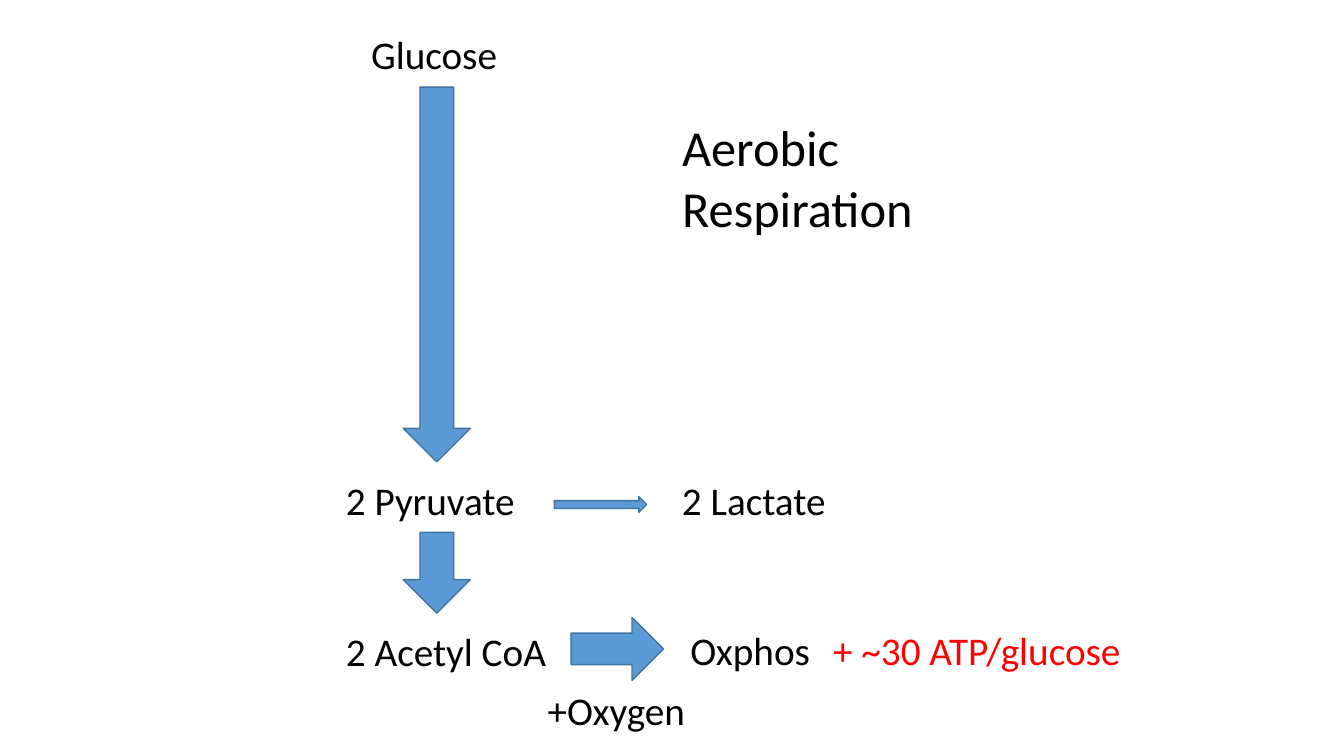
from pptx import Presentation
from pptx.dml.color import RGBColor
from pptx.enum.shapes import MSO_SHAPE
from pptx.enum.text import MSO_ANCHOR, MSO_AUTO_SIZE, PP_ALIGN
from pptx.util import Pt

DOWN, RIGHT = MSO_SHAPE.DOWN_ARROW, MSO_SHAPE.RIGHT_ARROW
TOP, LEFT = MSO_ANCHOR.TOP, PP_ALIGN.LEFT
FIT_SHAPE, FIT_NONE = MSO_AUTO_SIZE.SHAPE_TO_FIT_TEXT, MSO_AUTO_SIZE.NONE

BLACK = RGBColor(0x00, 0x00, 0x00)
RED = RGBColor(0xFF, 0x00, 0x00)
BLUE = RGBColor(0x5B, 0x9B, 0xD5)
DARK_BLUE = RGBColor(0x43, 0x73, 0x9E)

PX = 9525  # EMU per px, 96 px to the inch
PAGE_SIZE = (1280, 720)
LABEL_WIDTH, LABEL_HEIGHT = 264, 55

# Content: lengths in px
TITLE = ["Aerobic", "Respiration"]
TITLE_BOX = (640, 106, 360, 126)

LABELS = [  # text, left, top, width, colour
    ("Glucose", 344, 24, LABEL_WIDTH, BLACK),
    ("2 Pyruvate", 320, 449, LABEL_WIDTH, BLACK),
    ("2 Lactate", 640, 449, LABEL_WIDTH, BLACK),
    ("2 Acetyl CoA", 320, 593, LABEL_WIDTH, BLACK),
    ("Oxphos", 648, 592, LABEL_WIDTH, BLACK),
    ("+Oxygen", 512, 649, LABEL_WIDTH, BLACK),
    ("+ ~30 ATP/glucose", 784, 592, 356, RED),
]

ARROWS = [  # preset, left, top, width, height
    (DOWN, 384, 83, 64, 357),
    (RIGHT, 528, 473, 88, 15),
    (DOWN, 384, 507, 64, 77),
    (RIGHT, 544, 588, 88, 60),
]


def scaled(*lengths):
    return [length * PX for length in lengths]


def write_text(box, lines, size=28, color=BLACK, fit=FIT_SHAPE):
    frame = box.text_frame
    frame.word_wrap = True
    frame.auto_size = fit
    frame.vertical_anchor = TOP
    for index, line in enumerate(lines):
        para = frame.add_paragraph() if index else frame.paragraphs[0]
        para.alignment = LEFT
        span = para.add_run()
        span.text = line
        span.font.name = "Calibri"
        span.font.size = Pt(size)
        span.font.color.rgb = color


deck = Presentation()
deck.slide_width, deck.slide_height = scaled(*PAGE_SIZE)
page = deck.slides.add_slide(deck.slide_layouts[5])

# Title
title = page.shapes.title
title.left, title.top, title.width, title.height = scaled(*TITLE_BOX)
write_text(title, TITLE, size=36, fit=FIT_NONE)

# Reaction arrows
for preset, *place in ARROWS:
    arrow = page.shapes.add_shape(preset, *scaled(*place))
    arrow.shadow.inherit = False
    arrow.fill.solid()
    arrow.fill.fore_color.rgb = BLUE
    arrow.line.color.rgb = DARK_BLUE
    arrow.line.width = Pt(1)

# Molecule and yield labels
for text, left, top, width, color in LABELS:
    label = page.shapes.add_textbox(*scaled(left, top, width, LABEL_HEIGHT))
    write_text(label, [text], color=color)

deck.save("out.pptx")
